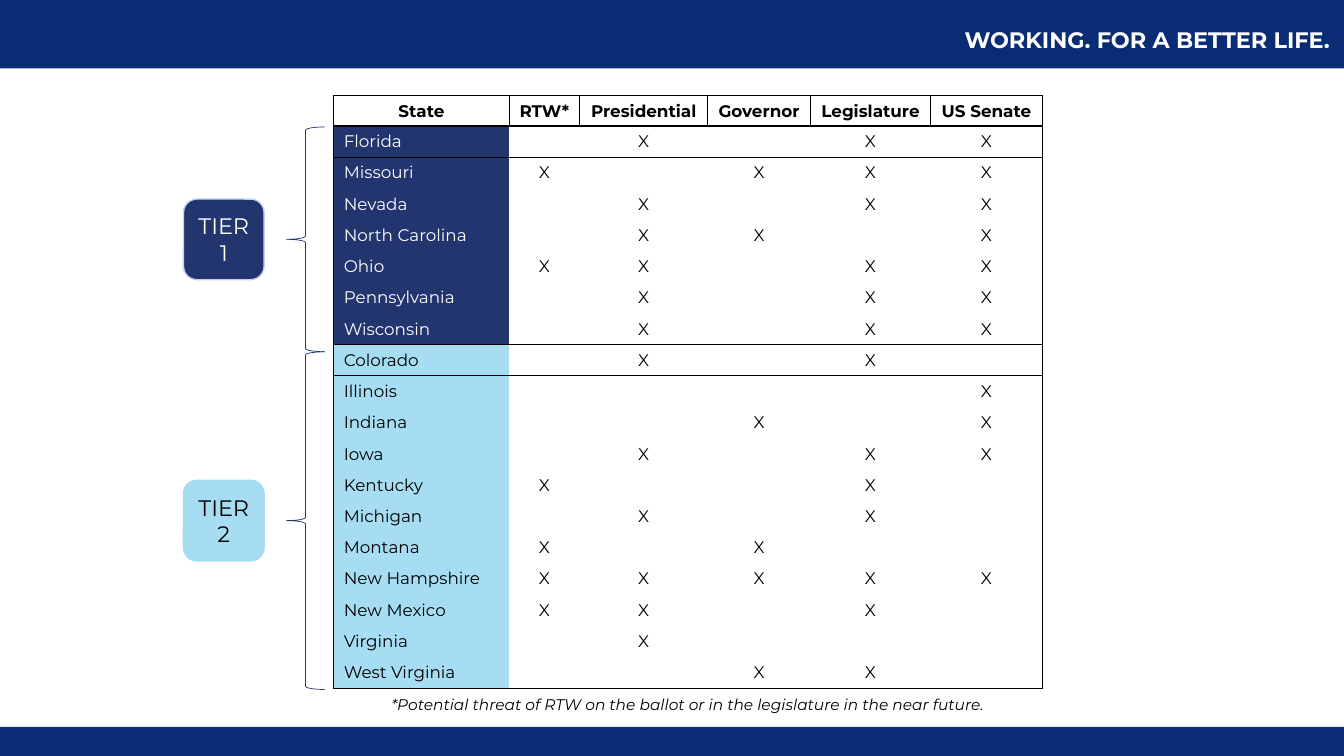
from dataclasses import dataclass

from lxml import etree
from pptx import Presentation
from pptx import util as u
from pptx.dml.color import RGBColor
from pptx.enum import shapes, text
from pptx.oxml import ns

IN = u.Inches
KIND = shapes.MSO_SHAPE
ALIGN = text.PP_ALIGN
MID = text.MSO_ANCHOR.MIDDLE
LOW = text.MSO_ANCHOR.BOTTOM


@dataclass(frozen=True)
class Theme:
    """Colours, font and type sizes of the slide."""
    band: str = "092C74"
    navy: str = "22356F"
    sky: str = "A7DDF3"
    rim: str = "C7D1EE"
    white: str = "FFFFFF"
    black: str = "000000"
    font: str = "Montserrat"
    big: int = 16
    body: int = 12
    note: int = 11
    plain: str = "{2D5ABB26-0587-4C30-8999-92F81FD0307C}"


T = Theme()
HEADS = ["State", "RTW*", "Presidential", "Governor", "Legislature", "US Senate"]
WIDTHS = [1.74, 0.7, 1.27, 1.02, 1.19, 1.11]
HEAD_H, ROW_H = 0.3, 0.31
NOTE = "*Potential threat of RTW on the ballot or in the legislature in the near future."
TIERS = [
    (T.navy, T.white, [
        ("Florida", "PLS"), ("Missouri", "RGLS"), ("Nevada", "PLS"),
        ("North Carolina", "PGS"), ("Ohio", "RPLS"),
        ("Pennsylvania", "PLS"), ("Wisconsin", "PLS"),
    ]),
    (T.sky, T.black, [
        ("Colorado", "PL"), ("Illinois", "S"), ("Indiana", "GS"),
        ("Iowa", "PLS"), ("Kentucky", "RL"), ("Michigan", "PL"),
        ("Montana", "RG"), ("New Hampshire", "RPGLS"), ("New Mexico", "RPL"),
        ("Virginia", "P"), ("West Virginia", "GL"),
    ]),
]


def write(frame, words, size=T.body, color=T.black, bold=False, slant=False,
          align=ALIGN.CENTER):
    """Put one formatted paragraph into a text frame."""
    para = frame.paragraphs[0]
    para.alignment = align
    if not words:
        para._p.get_or_add_endParaRPr().set("sz", str(size * 100))
        return
    run = para.add_run()
    run.text = words
    font = run.font
    font.name, font.size = T.font, u.Pt(size)
    font.bold, font.italic = bold, slant
    font.color.rgb = RGBColor.from_string(color)


def shape(slide, kind, box, fill=None, line=None, width=1):
    """Add a flat preset shape."""
    item = slide.shapes.add_shape(kind, *map(IN, box))
    item.shadow.inherit = False
    if fill:
        item.fill.solid()
        item.fill.fore_color.rgb = RGBColor.from_string(fill)
    else:
        item.fill.background()
    if line:
        item.line.color.rgb = RGBColor.from_string(line)
        item.line.width = u.Pt(width)
    else:
        item.line.fill.background()
    return item


def edge(cell, sides):
    """Draw thin black borders on the given sides of a cell."""
    props = cell._tc.get_or_add_tcPr()
    for side in "LRTB":
        if side in sides:
            line = etree.SubElement(props, ns.qn("a:ln" + side), w="12700")
            fill = etree.SubElement(line, ns.qn("a:solidFill"))
            etree.SubElement(fill, ns.qn("a:srgbClr"), val=T.black)


def fill_cell(cell, words, sides="", fill=None, anchor=MID, **style):
    """Set the borders, fill and text of a table cell."""
    edge(cell, sides)
    if fill:
        cell.fill.solid()
        cell.fill.fore_color.rgb = RGBColor.from_string(fill)
    else:
        cell.fill.background()
    cell.vertical_anchor = anchor
    write(cell.text_frame, words, **style)


def state_row(grid, row, state, marks, fill, color, sides):
    """Fill one state row with its name and its marks."""
    fill_cell(grid.cell(row, 0), state, sides + "L", fill, color=color,
              align=ALIGN.LEFT)
    for col, head in enumerate(HEADS[1:], 1):
        mark = "X" if head.split()[-1][0] in marks else ""
        rim = "R" if col == len(HEADS) - 1 else ""
        fill_cell(grid.cell(row, col), mark, sides + rim)


def state_table(slide, left, top):
    """Add the table of states by tier."""
    count = sum(len(states) for _, _, states in TIERS) + 2
    size = sum(WIDTHS), HEAD_H + ROW_H * (count - 1)
    grid = slide.shapes.add_table(
        count, len(HEADS), *map(IN, (left, top, *size))).table
    grid.horz_banding = grid.first_row = False
    grid._tbl.tblPr.find(ns.qn("a:tableStyleId")).text = T.plain
    for col, width in enumerate(WIDTHS):
        grid.columns[col].width = IN(width)
    for row in range(count):
        grid.rows[row].height = IN(ROW_H if row else HEAD_H)
    for col, head in enumerate(HEADS):
        fill_cell(grid.cell(0, col), head, "LRTB", bold=True)
    row = 1
    for fill, color, states in TIERS:
        for pos, (state, marks) in enumerate(states):
            sides = "T" * (pos == 0) + "B" * (pos == len(states) - 1)
            state_row(grid, row, state, marks, fill, color, sides)
            row += 1
    for col in range(1, len(HEADS)):
        edge(grid.cell(row, col), "T")
    grid.cell(row, 0).merge(grid.cell(row, len(HEADS) - 1))
    fill_cell(grid.cell(row, 0), NOTE, "T", anchor=LOW, size=T.note, slant=True)


def tier(slide, label, top, height, fill, line, color):
    """Add a brace with its tier badge centred beside it."""
    shape(slide, KIND.LEFT_BRACE, (2.84, top, 0.38, height), line=T.navy, width=0.5)
    side = 0.8
    box = 1.82, top + (height - side) / 2, side, side
    badge = shape(slide, KIND.ROUNDED_RECTANGLE, box, fill, line)
    frame = badge.text_frame
    frame.word_wrap = True
    frame.vertical_anchor = MID
    write(frame, label, size=T.big, color=color)


def bands(slide):
    """Add the top and bottom bands and the motto."""
    for top, height in ((7.21, 0.29), (0, 0.68)):
        shape(slide, KIND.RECTANGLE, (0, top, 13.33, height), T.band)
    motto = slide.shapes.add_textbox(*map(IN, (8.61, 0.21, 4.68, 0.37)))
    motto.text_frame.word_wrap = True
    write(motto.text_frame, "WORKING. FOR A BETTER LIFE.", size=T.big,
          color=T.white, bold=True, align=ALIGN.RIGHT)


def main():
    """Build and save the slide."""
    deck = Presentation()
    deck.slide_width, deck.slide_height = IN(13.33), IN(7.5)
    slide = deck.slides.add_slide(deck.slide_layouts[6])
    bands(slide)
    state_table(slide, 3.31, 0.95)
    tier(slide, "TIER 1", 1.26, 2.23, T.navy, T.rim, T.white)
    tier(slide, "TIER 2", 3.49, 3.35, T.sky, T.sky, T.black)
    deck.save("out.pptx")


if __name__ == "__main__":
    main()
